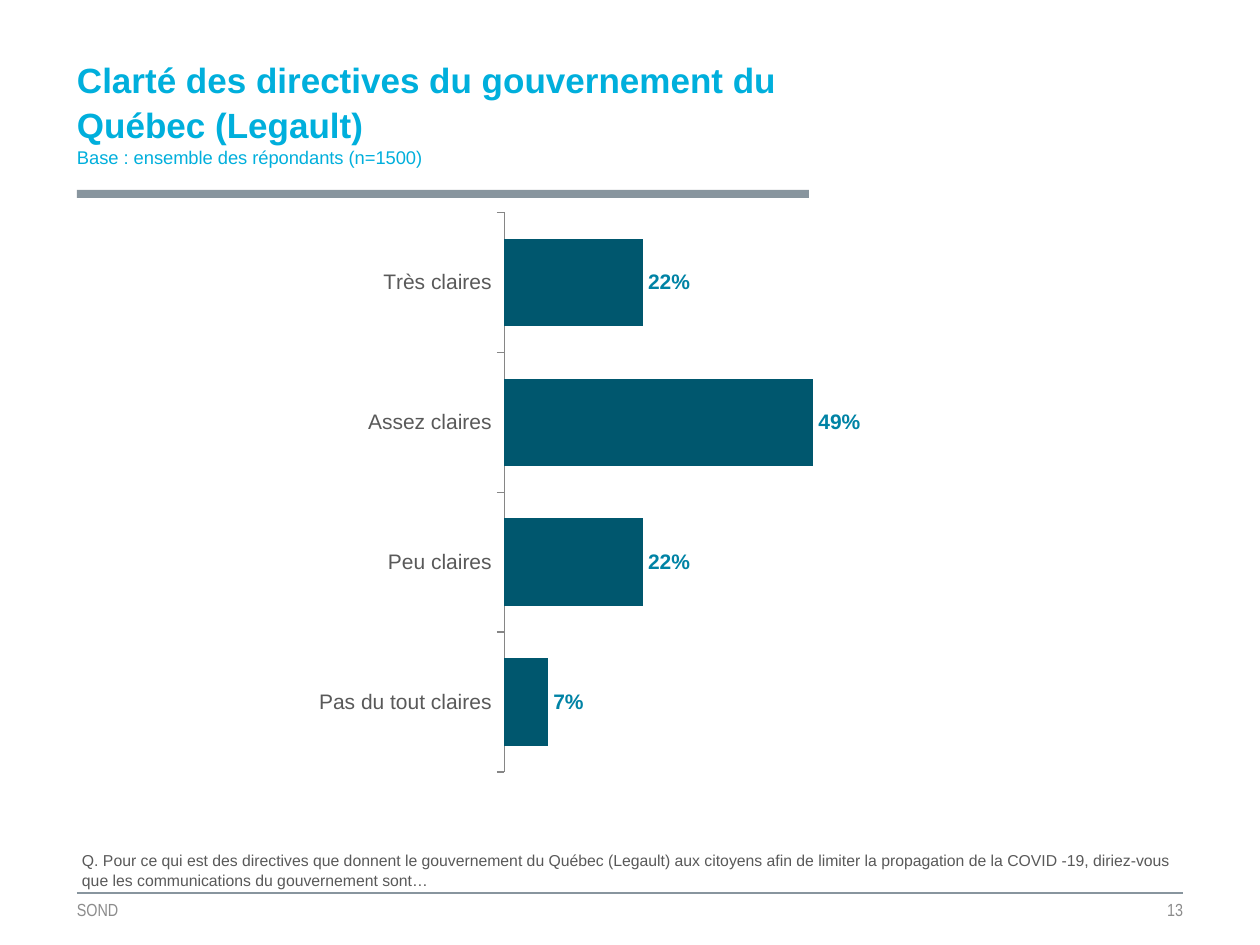
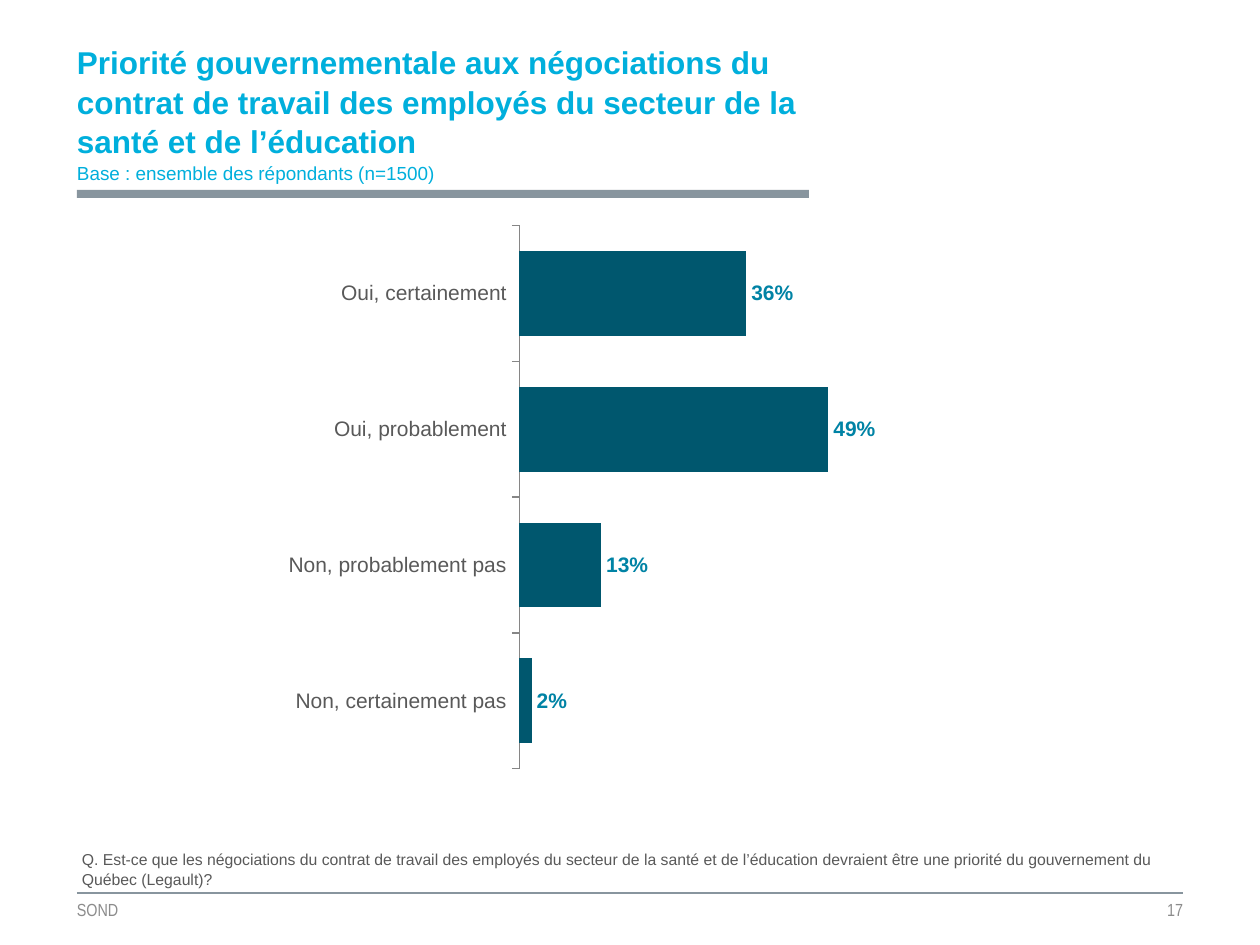
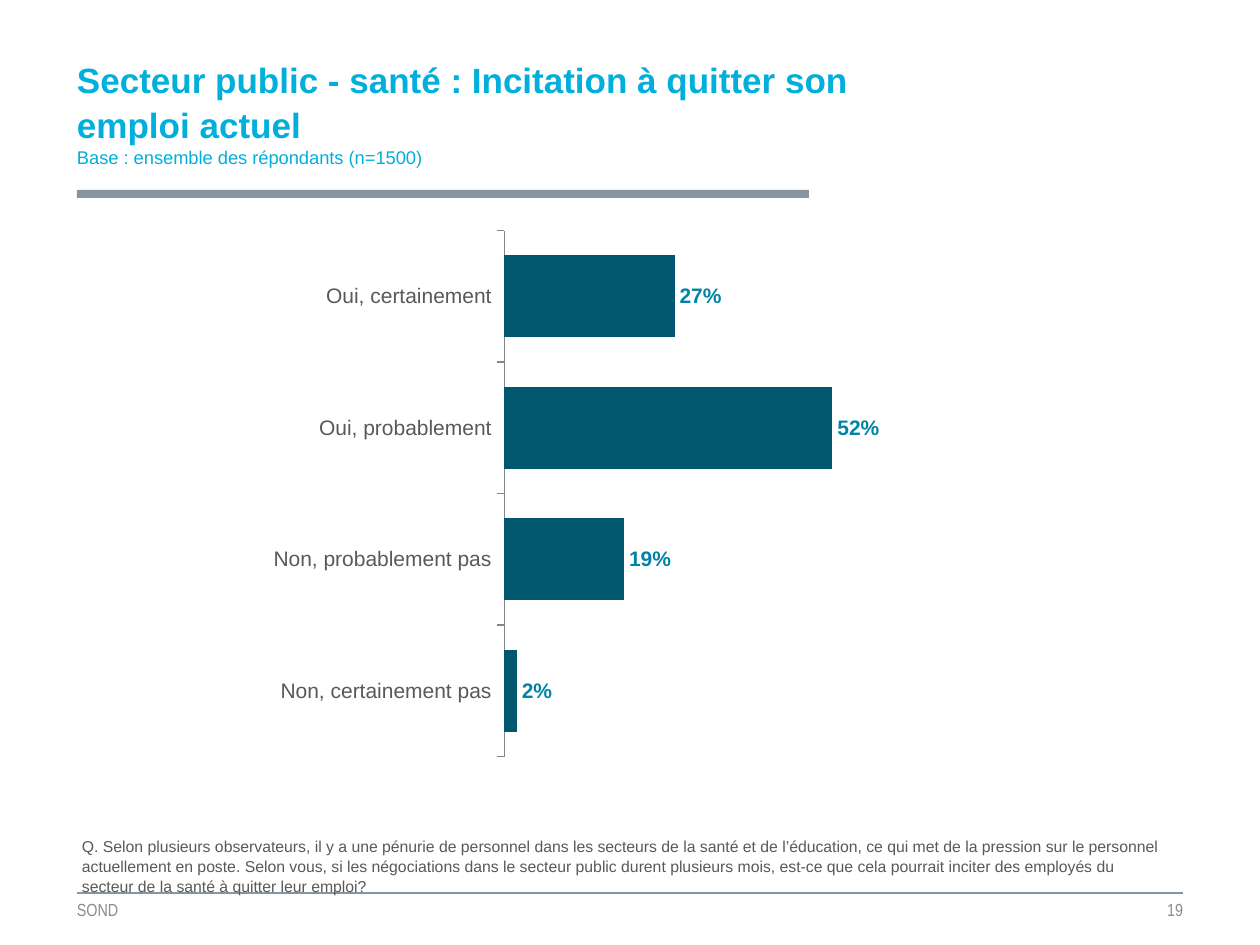
from lxml import etree
from pptx import Presentation
from pptx.chart.data import CategoryChartData
from pptx.dml.color import RGBColor
from pptx.enum.chart import XL_CHART_TYPE, XL_LABEL_POSITION, XL_TICK_MARK
from pptx.enum.shapes import MSO_CONNECTOR, MSO_SHAPE
from pptx.enum.text import MSO_ANCHOR, PP_ALIGN
from pptx.oxml import parse_xml
from pptx.oxml.ns import nsdecls, qn
from pptx.util import Pt

EMU_PER_PX = 914400 // 126
PAGE_WIDTH, PAGE_HEIGHT = 1260, 945
LEFT, RIGHT = 77, 1183
FOOTER_TOP, FOOTER_HEIGHT = 893, 33
TITLE_TOP, TITLE_HEIGHT = 52, 138
LINE_SPACING = 1.05

COLORS = {
    "title": "00AFDC",
    "rule": "88959E",
    "footer": "8C8C8C",
    "text": "595959",
    "axis": "868686",
    "chart": "7F7F7F",
    "bar": "00576E",
    "value": "0083A5",
}
FONT, FOOTER_FONT = "Arial", "Arial Narrow"

BAR_CHART = XL_CHART_TYPE.BAR_CLUSTERED
OUTSIDE_END = XL_LABEL_POSITION.OUTSIDE_END
TICK_OUT, TICK_NONE = XL_TICK_MARK.OUTSIDE, XL_TICK_MARK.NONE
STRAIGHT = MSO_CONNECTOR.STRAIGHT
RECTANGLE = MSO_SHAPE.RECTANGLE
TOP, MIDDLE = MSO_ANCHOR.TOP, MSO_ANCHOR.MIDDLE
ALIGN_LEFT, ALIGN_RIGHT = PP_ALIGN.LEFT, PP_ALIGN.RIGHT

BASE = "Base : ensemble des répondants (n=1500)"
YES_NO = ["Oui, certainement", "Oui, probablement",
          "Non, probablement pas", "Non, certainement pas"]

SURVEY = [
    {
        "number": 13,
        "title": "Clarté des directives du gouvernement du Québec (Legault)",
        "title_width": 728, "title_size": 20, "base_size": 10.5,
        "question": "Q. Pour ce qui est des directives que donnent le gouvernement "
                    "du Québec (Legault) aux citoyens afin de limiter la propagation "
                    "de la COVID -19, diriez-vous que les communications du "
                    "gouvernement sont…",
        "question_at": (69, 844, 1130, 50),
        "answers": ["Très claires", "Assez claires", "Peu claires",
                    "Pas du tout claires"],
        "shares": [0.22, 0.49, 0.22, 0.07],
        "chart_at": (54, 199, 917, 586), "plot_height": 0.955,
    },
    {
        "number": 17,
        "title": "Priorité gouvernementale aux négociations du contrat de travail "
                 "des employés du secteur de la santé et de l’éducation",
        "title_width": 748, "title_size": 18, "base_size": 10.8,
        "question": "Q. Est-ce que les négociations du contrat de travail des "
                    "employés du secteur de la santé et de l’éducation devraient "
                    "être une priorité du gouvernement du Québec (Legault)?",
        "question_at": (69, 843, 1114, 50),
        "answers": YES_NO,
        "shares": [0.36, 0.49, 0.13, 0.02],
        "chart_at": (69, 212, 917, 582), "plot_height": 0.934,
    },
    {
        "number": 19,
        "title": "Secteur public - santé : Incitation à quitter son emploi actuel",
        "title_width": 866, "title_size": 20, "base_size": 10.5,
        "question": "Q. Selon plusieurs observateurs, il y a une pénurie de "
                    "personnel dans les secteurs de la santé et de l’éducation, ce "
                    "qui met de la pression sur le personnel actuellement en poste. "
                    "Selon vous, si les négociations dans le secteur public durent "
                    "plusieurs mois, est-ce que cela pourrait inciter des employés "
                    "du secteur de la santé à quitter leur emploi?",
        "question_at": (69, 830, 1114, 71),
        "answers": YES_NO,
        "shares": [0.27, 0.52, 0.19, 0.02],
        "chart_at": (54, 218, 917, 551), "plot_height": 0.955,
    },
]


def px(*lengths):
    return [length * EMU_PER_PX for length in lengths]


def color(name):
    return RGBColor.from_string(COLORS[name])


def style(font, size, color_name, bold=False, name=FONT):
    font.name = name
    font.size = Pt(size)
    font.bold = bold
    font.color.rgb = color(color_name)


def add_text(page, at, text, insets=(0, 0, 0, 0), anchor=MIDDLE, align=ALIGN_LEFT):
    """Add a wrapped one-paragraph text box and return the paragraph."""
    frame = page.shapes.add_textbox(*px(*at)).text_frame
    frame.word_wrap = True
    frame.vertical_anchor = anchor
    (frame.margin_left, frame.margin_top,
     frame.margin_right, frame.margin_bottom) = px(*insets)
    paragraph = frame.paragraphs[0]
    paragraph.text = text
    paragraph.alignment = align
    return paragraph


def add_rules(page):
    band = page.shapes.add_shape(RECTANGLE, *px(LEFT, 190, 732, 8))
    band.shadow.inherit = False
    band.fill.solid()
    band.fill.fore_color.rgb = color("rule")
    band.line.fill.background()

    line = page.shapes.add_connector(
        STRAIGHT, *px(LEFT, FOOTER_TOP, RIGHT, FOOTER_TOP))
    line.line.color.rgb = color("rule")
    line.line.width = Pt(1.5)
    etree.SubElement(line._element.spPr, qn("a:effectLst"))


def add_footer(page, number):
    width = 355
    for left, text, align in ((LEFT, "SOND", ALIGN_LEFT),
                              (RIGHT - width, str(number), ALIGN_RIGHT)):
        paragraph = add_text(page, (left, FOOTER_TOP, width, FOOTER_HEIGHT), text,
                             align=align)
        style(paragraph.runs[0].font, 10, "footer", name=FOOTER_FONT)


def add_title(page, title, width, title_size, base_size):
    paragraph = add_text(page, (LEFT, TITLE_TOP, width, TITLE_HEIGHT),
                         f"{title}\v{BASE}", insets=(0, 0, 0, 17))
    paragraph.line_spacing = LINE_SPACING
    heading, base = paragraph.runs
    style(heading.font, title_size, "title", bold=True)
    style(base.font, base_size, "title")


def add_question(page, at, question):
    paragraph = add_text(page, at, question, insets=(13, 6, 13, 6), anchor=TOP)
    paragraph.line_spacing = LINE_SPACING
    style(paragraph.runs[0].font, 9, "text")


def set_plot_area(chart, **fractions):
    """Fix the inner plot area; x, y, w and h are fractions of the chart."""
    plot_area = chart._chartSpace.chart.plotArea
    for layout in plot_area.findall(qn("c:layout")):
        plot_area.remove(layout)
    values = "".join(f'<c:{key} val="{value}"/>' for key, value in fractions.items())
    plot_area.insert(0, parse_xml(
        f'<c:layout {nsdecls("c")}><c:manualLayout><c:layoutTarget val="inner"/>'
        f'<c:xMode val="edge"/><c:yMode val="edge"/>{values}'
        '</c:manualLayout></c:layout>'))


def add_answer_chart(page, at, answers, shares, plot_height):
    data = CategoryChartData(number_format="0%")
    data.categories = answers
    data.add_series("Series 1", shares)
    chart = page.shapes.add_chart(BAR_CHART, *px(*at), data).chart
    chart.has_legend = False
    chart.has_title = False
    style(chart.font, 10.5, "chart")
    set_plot_area(chart, x=0.491, y=0.023, w=0.413, h=plot_height)

    answer_axis = chart.category_axis
    answer_axis.reverse_order = True
    answer_axis.has_major_gridlines = False
    answer_axis.major_tick_mark = TICK_OUT
    answer_axis.minor_tick_mark = TICK_NONE
    answer_axis.format.line.color.rgb = color("axis")
    answer_axis.format.line.width = Pt(0.75)
    style(answer_axis.tick_labels.font, 12, "text")

    share_axis = chart.value_axis
    share_axis.visible = False
    share_axis.has_major_gridlines = False
    share_axis.minimum_scale = 0
    share_axis.maximum_scale = 0.6
    share_axis.major_unit = 0.2

    plot = chart.plots[0]
    plot.gap_width = 60
    plot.vary_by_categories = False
    bars = plot.series[0]
    bars.format.fill.solid()
    bars.format.fill.fore_color.rgb = color("bar")
    labels = bars.data_labels
    labels.show_value = True
    labels.position = OUTSIDE_END
    labels.number_format = "0%"
    labels.number_format_is_linked = False
    style(labels.font, 12, "value", bold=True)


def main():
    deck = Presentation()
    deck.slide_width, deck.slide_height = px(PAGE_WIDTH, PAGE_HEIGHT)
    blank = deck.slide_layouts[6]
    for item in SURVEY:
        page = deck.slides.add_slide(blank)
        add_rules(page)
        add_footer(page, item["number"])
        add_answer_chart(page, item["chart_at"], item["answers"], item["shares"],
                         item["plot_height"])
        add_question(page, item["question_at"], item["question"])
        add_title(page, item["title"], item["title_width"], item["title_size"],
                  item["base_size"])
    deck.save("out.pptx")


if __name__ == "__main__":
    main()
